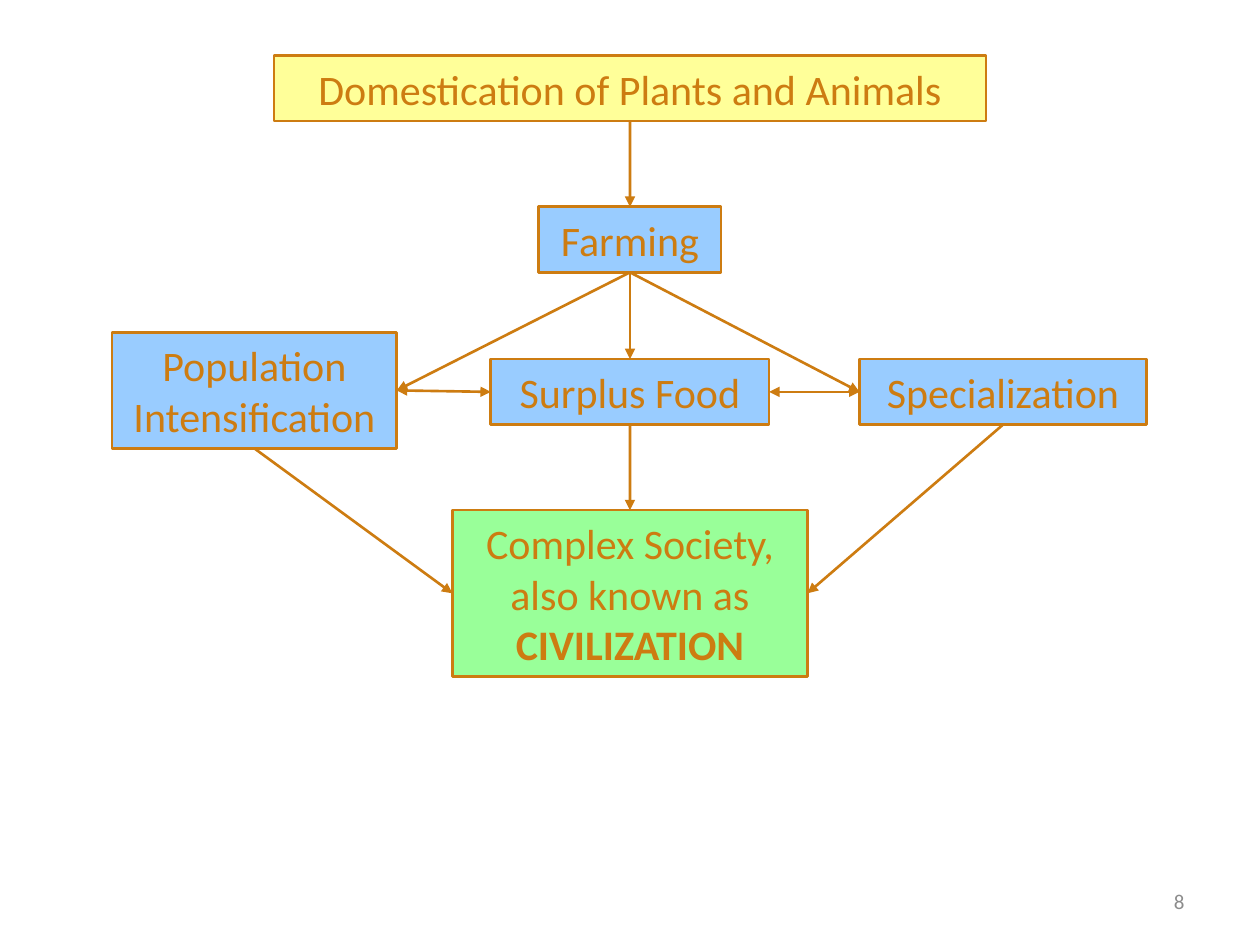
"""Build a flow diagram that leads from domestication to civilization."""
from dataclasses import dataclass
from typing import Any

from pptx import Presentation
from pptx.dml.color import RGBColor
from pptx.enum.shapes import MSO_CONNECTOR, MSO_SHAPE
from pptx.enum.text import MSO_ANCHOR, MSO_AUTO_SIZE, PP_ALIGN
from pptx.oxml.ns import qn
from pptx.util import Cm, Pt
from lxml.etree import SubElement


@dataclass(frozen=True)
class Theme:
    font: str = "Calibri"
    accent: str = "CD7C11"
    muted: str = "8C8C8C"
    yellow: str = "FFFF99"
    blue: str = "99CCFF"
    green: str = "99FF99"
    body: int = 24
    small: int = 12
    line: float = 1.5


@dataclass(frozen=True)
class Box:
    name: str
    lines: tuple[str, ...]
    cx: float
    cy: float
    width: float
    height: float
    fill: str
    bold_line: str = ""


@dataclass(frozen=True)
class Arrow:
    start: str
    start_side: int
    end: str
    end_side: int
    both: bool = False


T = Theme()
TOP, LEFT, BOTTOM, RIGHT = range(4)
MID, ONE_LINE, ROW = 12.7, 1.32, 7.9

BOXES = (
    Box("domestication", ("Domestication of Plants and Animals",), MID, 1.78, 14.35, ONE_LINE, T.yellow),
    Box("farming", ("Farming",), MID, 4.83, 3.68, ONE_LINE, T.blue),
    Box("surplus", ("Surplus Food",), MID, ROW, 5.61, ONE_LINE, T.blue),
    Box("specialization", ("Specialization",), 20.22, ROW, 5.79, ONE_LINE, T.blue),
    Box("population", ("Population", "Intensification"), 5.13, 7.87, 5.74, 2.34, T.blue),
    Box("civilization", ("Complex Society,", "also known as", "CIVILIZATION"),
        MID, 11.96, 7.16, 3.35, T.green, "CIVILIZATION"),
)

ARROWS = (
    Arrow("domestication", BOTTOM, "farming", TOP),
    Arrow("farming", BOTTOM, "surplus", TOP),
    Arrow("farming", BOTTOM, "specialization", LEFT),
    Arrow("farming", BOTTOM, "population", RIGHT),
    Arrow("surplus", BOTTOM, "civilization", TOP),
    Arrow("population", BOTTOM, "civilization", LEFT),
    Arrow("population", RIGHT, "surplus", LEFT, both=True),
    Arrow("specialization", LEFT, "surplus", RIGHT, both=True),
    Arrow("specialization", BOTTOM, "civilization", RIGHT),
)


def write(sp: Any, *lines: str, size: int = T.body, color: str = T.accent,
          align: PP_ALIGN = PP_ALIGN.CENTER, bold_line: str = "", wrap: bool = False) -> None:
    """Fill a shape with one formatted paragraph per line."""
    tf = sp.text_frame
    tf.auto_size = MSO_AUTO_SIZE.NONE
    tf.word_wrap = wrap
    tf.vertical_anchor = MSO_ANCHOR.MIDDLE
    for i, line in enumerate(lines):
        p = tf.add_paragraph() if i else tf.paragraphs[0]
        p.alignment = align
        r = p.add_run()
        r.text = line
        r.font.name = T.font
        r.font.size = Pt(size)
        r.font.bold = line == bold_line
        r.font.color.rgb = RGBColor.from_string(color)


def draw_box(sp: Any, box: Box) -> None:
    """Place a shape around its centre and give it fill, outline and text."""
    sp.left, sp.top = Cm(box.cx - box.width / 2), Cm(box.cy - box.height / 2)
    sp.width, sp.height = Cm(box.width), Cm(box.height)
    sp.fill.solid()
    sp.fill.fore_color.rgb = RGBColor.from_string(box.fill)
    sp.line.color.rgb = RGBColor.from_string(T.accent)
    sp.line.width = Pt(T.line)
    sp.shadow.inherit = False
    write(sp, *box.lines, bold_line=box.bold_line)


def draw_arrow(s: Any, arrow: Arrow, shapes: dict[str, Any]) -> None:
    """Connect two boxes with a straight arrow."""
    c = s.shapes.add_connector(MSO_CONNECTOR.STRAIGHT, 0, 0, 0, 0)
    c.begin_connect(shapes[arrow.start], arrow.start_side)
    c.end_connect(shapes[arrow.end], arrow.end_side)
    c.line.color.rgb = RGBColor.from_string(T.accent)
    c.line.width = Pt(T.line)
    ln = c.line._get_or_add_ln()
    for tag in ("a:headEnd", "a:tailEnd") if arrow.both else ("a:tailEnd",):
        SubElement(ln, qn(tag), type="triangle")
    SubElement(c._element.spPr, qn("a:effectLst"))


def main() -> None:
    """Create and save the presentation."""
    prs = Presentation()
    prs.slide_width, prs.slide_height = Cm(25.4), Cm(19.05)
    s = prs.slides.add_slide(prs.slide_layouts[5])
    shapes = {}
    for box in BOXES:
        is_title = box.name == "domestication"
        sp = s.shapes.title if is_title else s.shapes.add_shape(MSO_SHAPE.RECTANGLE, 0, 0, 0, 0)
        draw_box(sp, box)
        shapes[box.name] = sp
    for arrow in ARROWS:
        draw_arrow(s, arrow, shapes)
    number = s.shapes.add_textbox(Cm(18.2), Cm(17.66), Cm(5.93), Cm(1.01))
    write(number, "8", size=T.small, color=T.muted, align=PP_ALIGN.RIGHT, wrap=True)
    prs.save("out.pptx")


if __name__ == "__main__":
    main()
